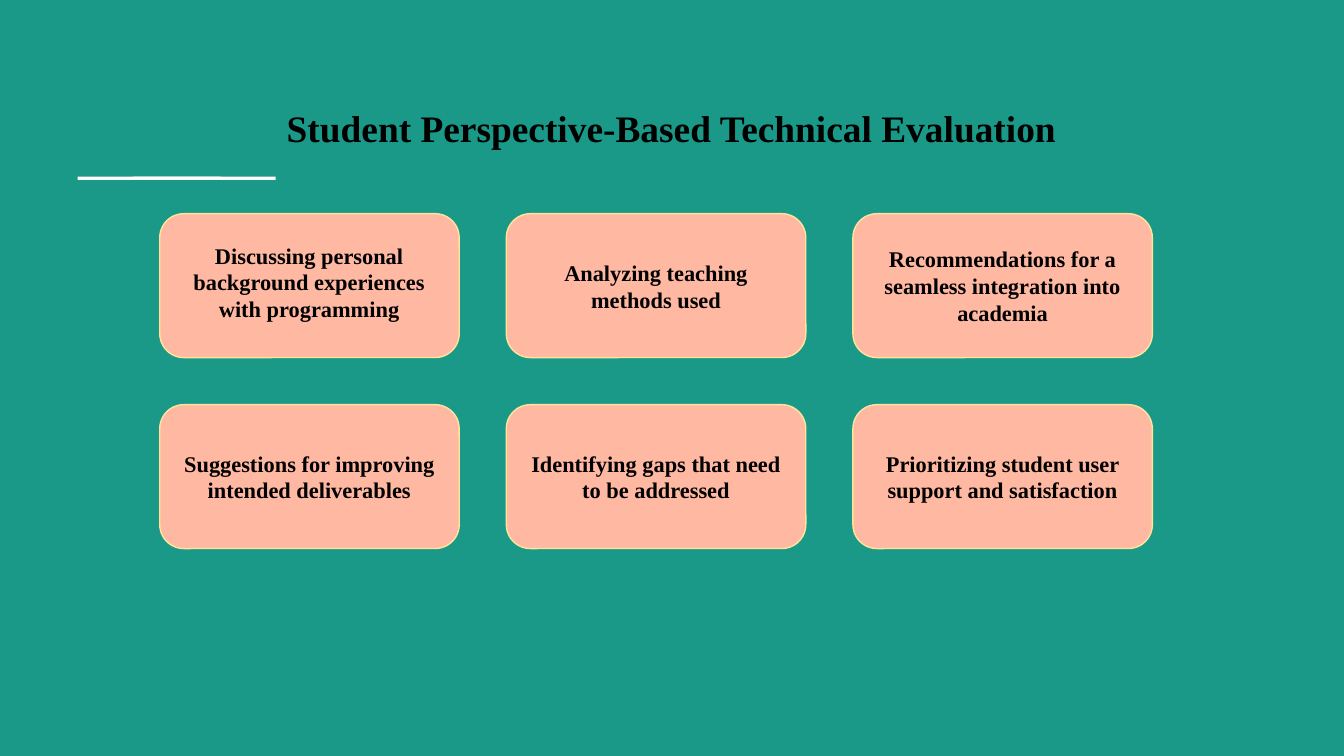
"""Build the slide on student perspective-based technical evaluation."""
from pptx import Presentation
from pptx.dml.color import RGBColor
from pptx.enum.shapes import MSO_SHAPE as Shape
from pptx.enum.text import MSO_ANCHOR as Anchor, MSO_AUTO_SIZE as AutoSize, PP_ALIGN as Align
from pptx.util import Cm, Pt

TEAL = RGBColor(0x1A, 0x99, 0x88)
PEACH = RGBColor(0xFF, 0xB8, 0xA2)
CREAM = RGBColor(0xFF, 0xE5, 0x99)
WHITE = RGBColor(0xFF, 0xFF, 0xFF)
BLACK = RGBColor(0x00, 0x00, 0x00)

CARD_WIDTH, CARD_HEIGHT = 5.66, 2.72
GRID_LEFT, GRID_TOP = 3.02, 4.04
COLUMN_STEP, ROW_STEP = 6.55, 3.61
INTRO = "Discussing personal background experiences with programming"
CARD_ROWS = [
    ["", "Analyzing teaching methods used",
     "Recommendations for a seamless integration into academia"],
    ["Suggestions for improving intended deliverables",
     "Identifying gaps that need to be addressed",
     "Prioritizing student user support and satisfaction"],
]


class SlideBuilder:
    font = "Times New Roman"
    inset = Cm(0.25)

    def __init__(self, page):
        self.page = page
        page.background.fill.solid()
        page.background.fill.fore_color.rgb = TEAL

    def set_text(self, box, text, size, anchor):
        frame = box.text_frame
        frame.word_wrap = True
        frame.auto_size = AutoSize.NONE
        frame.vertical_anchor = anchor
        frame.margin_left = frame.margin_right = self.inset
        frame.margin_top = frame.margin_bottom = self.inset
        frame.text = text
        para = frame.paragraphs[0]
        para.alignment = Align.CENTER
        for span in para.runs:
            span.font.name = self.font
            span.font.size = Pt(size)
            span.font.bold = True
            span.font.color.rgb = BLACK

    def title(self, text, left, top, width, height):
        box = self.page.shapes.title
        box.left, box.top = Cm(left), Cm(top)
        box.width, box.height = Cm(width), Cm(height)
        self.set_text(box, text, 20, Anchor.TOP)

    def label(self, text, left, top, width, height):
        box = self.page.shapes.add_textbox(Cm(left), Cm(top), Cm(width), Cm(height))
        self.set_text(box, text, 12, Anchor.TOP)

    def shape(self, kind, fill, left, top, width, height):
        box = self.page.shapes.add_shape(kind, Cm(left), Cm(top), Cm(width), Cm(height))
        box.shadow.inherit = False
        box.fill.solid()
        box.fill.fore_color.rgb = fill
        return box

    def bar(self, left, top, width, height):
        self.shape(Shape.RECTANGLE, WHITE, left, top, width, height).line.fill.background()

    def card(self, text, left, top):
        box = self.shape(Shape.ROUNDED_RECTANGLE, PEACH, left, top, CARD_WIDTH, CARD_HEIGHT)
        box.line.color.rgb = CREAM
        box.line.width = Pt(0.75)
        if text:
            self.set_text(box, text, 12, Anchor.MIDDLE)


def main():
    deck = Presentation()
    deck.slide_width, deck.slide_height = Cm(25.4), Cm(14.29)
    builder = SlideBuilder(deck.slides.add_slide(deck.slide_layouts[5]))
    for left in (1.47, 2.51):
        builder.bar(left, 3.34, 2.7, 0.06)
    builder.title("Student Perspective-Based Technical Evaluation", 4.72, 1.73, 15.95, 1.57)
    for row, texts in enumerate(CARD_ROWS):
        for column, text in enumerate(texts):
            builder.card(text, GRID_LEFT + column * COLUMN_STEP, GRID_TOP + row * ROW_STEP)
    builder.label(INTRO, 3.38, 4.32, 4.93, 0.94)
    deck.save("out.pptx")


if __name__ == "__main__":
    main()
